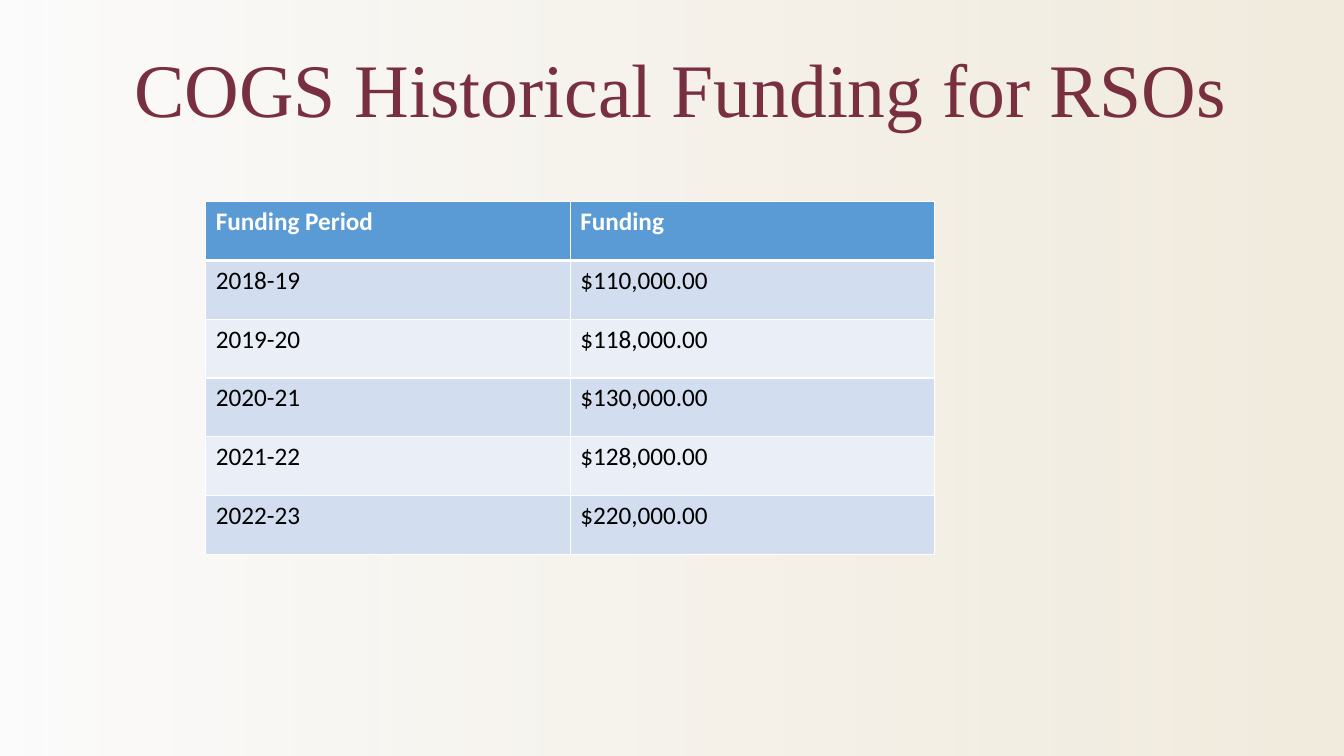
from lxml import etree
from pptx import Presentation
from pptx.dml.color import RGBColor
from pptx.enum.shapes import MSO_SHAPE
from pptx.enum.text import MSO_ANCHOR, PP_ALIGN
from pptx.oxml.ns import qn
from pptx.util import Inches, Pt

RECTANGLE = MSO_SHAPE.RECTANGLE
BOTTOM = MSO_ANCHOR.BOTTOM
CENTER = PP_ALIGN.CENTER

GARNET, GOLD, PALE_GRAY = "782F40", "CEB888", "F5F5F5"
WHITE, BLACK = "FFFFFF", "000000"
HEADER_FILL = "5B9BD5"
BAND_FILLS = ("D2DEEF", "EAEFF7")

FUNDING = [
    ("Funding Period", "Funding"),
    ("2018-19", "$110,000.00"),
    ("2019-20", "$118,000.00"),
    ("2020-21", "$130,000.00"),
    ("2021-22", "$128,000.00"),
    ("2022-23", "$220,000.00"),
]


def rgb(color):
    return RGBColor.from_string(color)


def format_run(r, font, size, color, bold=False):
    r.font.name = font
    r.font.size = Pt(size)
    r.font.bold = bold
    r.font.color.rgb = rgb(color)


def set_border(cell, side, color, width):
    """Draw one cell edge; side is L, R, T or B. Call before filling the cell."""
    ln = etree.SubElement(cell._tc.get_or_add_tcPr(), qn(f"a:ln{side}"), w=str(Pt(width)))
    fill = etree.SubElement(ln, qn("a:solidFill"))
    etree.SubElement(fill, qn("a:srgbClr"), val=color)


def add_background(s, left, top, width, height):
    sp = s.shapes.add_shape(RECTANGLE, Inches(left), Inches(top), Inches(width), Inches(height))
    sp.shadow.inherit = False
    sp.line.fill.background()
    sp.rotation = 180
    sp.fill.gradient()
    sp.fill.gradient_angle = 0
    for stop, color in zip(sp.fill.gradient_stops, (GOLD, PALE_GRAY)):
        stop.color.rgb = rgb(color)
    colors = sp.element.spPr.iter(qn("a:srgbClr"))
    for color, opacity in zip(list(colors), (28, 34)):
        etree.SubElement(color, qn("a:alpha"), val=str(opacity * 1000))


def add_title(s, left, top, width, height):
    box = s.shapes.add_textbox(Inches(left), Inches(top), Inches(width), Inches(height))
    tf = box.text_frame
    tf.word_wrap = True
    tf.vertical_anchor = BOTTOM
    tf.text = "COGS Historical Funding for RSOs"
    p = tf.paragraphs[0]
    p.alignment = CENTER
    format_run(p.runs[0], "Times New Roman", 54, GARNET)


def add_funding_table(s, left, top, width, height):
    frame = s.shapes.add_table(len(FUNDING), len(FUNDING[0]), Inches(left), Inches(top),
                               Inches(width), Inches(height))
    table = frame.table
    for i, values in enumerate(FUNDING):
        header = i == 0
        widths = {"L": 1, "R": 1, "T": 3 if i == 1 else 1, "B": 3 if header else 1}
        for j, value in enumerate(values):
            cell = table.cell(i, j)
            for side, line_width in widths.items():
                set_border(cell, side, WHITE, line_width)
            cell.fill.solid()
            cell.fill.fore_color.rgb = rgb(HEADER_FILL if header else BAND_FILLS[(i - 1) % 2])
            cell.text_frame.text = value
            format_run(cell.text_frame.paragraphs[0].runs[0], "Calibri", 18,
                       WHITE if header else BLACK, header)


def main():
    prs = Presentation()
    prs.slide_width, prs.slide_height = Inches(13.33), Inches(7.5)
    s = prs.slides.add_slide(prs.slide_layouts[6])
    add_background(s, 0, 0, 13.33, 7.5)
    add_funding_table(s, 2.04, 2, 7.23, 3.5)
    add_title(s, 1.18, 0.36, 11.14, 1.01)
    prs.save("out.pptx")


if __name__ == "__main__":
    main()
